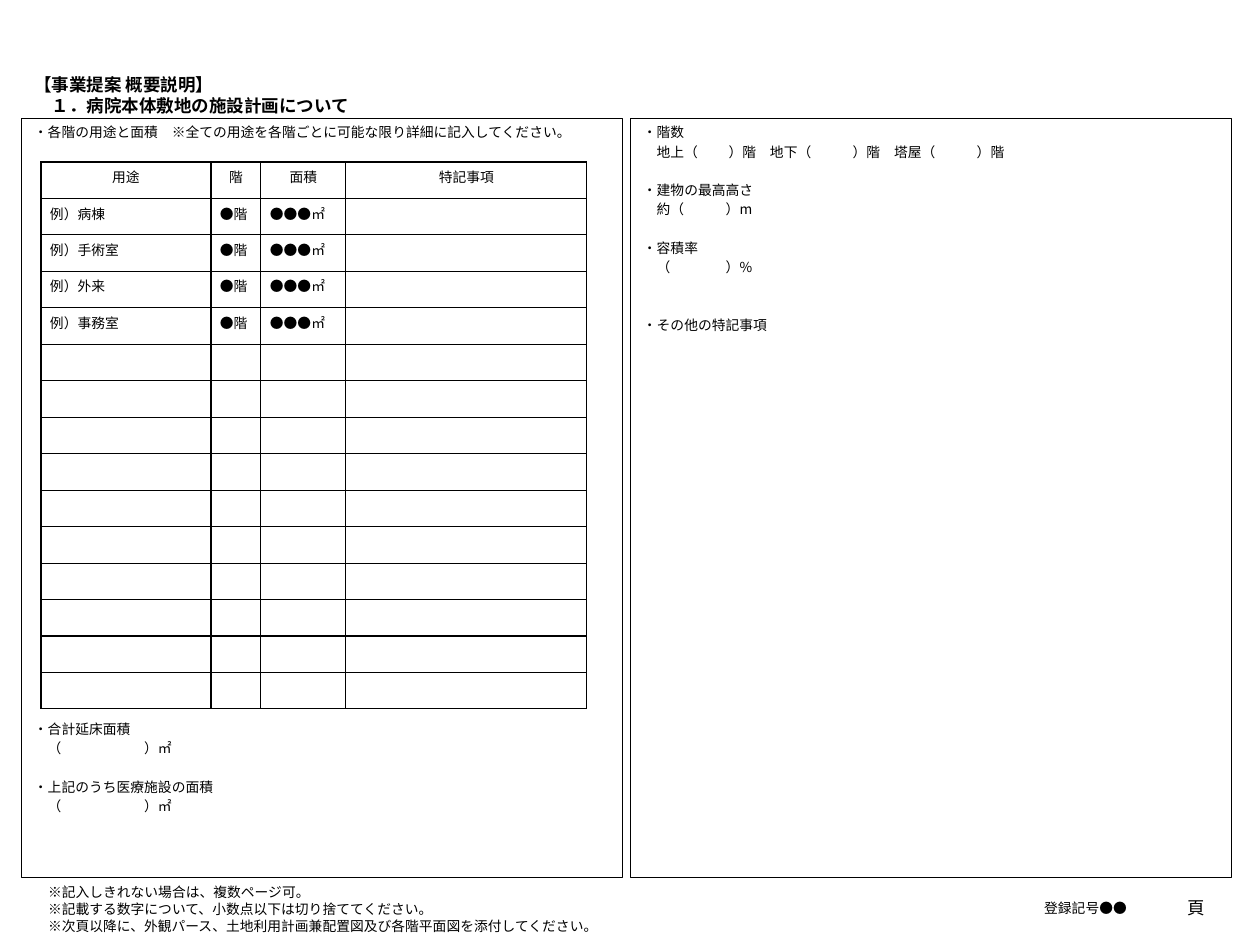
from dataclasses import dataclass

from lxml.etree import SubElement
from pptx import Presentation
from pptx.dml.color import RGBColor
from pptx.enum.shapes import MSO_SHAPE
from pptx.enum.text import MSO_ANCHOR, MSO_AUTO_SIZE, PP_ALIGN
from pptx.oxml.ns import qn
from pptx.util import Emu, Pt

PX = 10160  # EMU per px, 90 px to the inch


@dataclass(frozen=True)
class Theme:
    font: str = "Noto Sans CJK JP"
    ink: RGBColor = RGBColor(0, 0, 0)
    heading: int = 14
    body: int = 11
    leading: float = 1.2  # line height as a multiple of type size
    before: float = 0.2  # panel paragraph gap, same unit
    panel_line: float = 0.75
    grid_line: float = 1


THEME = Theme()

HEADING = [("【事業提案 概要説明】", 0, 0), ("１．病院本体敷地の施設計画について", 0, 1)]

# Panel paragraphs: text, lines left free above, indent in characters
USES = [
    ("・各階の用途と面積　※全ての用途を各階ごとに可能な限り詳細に記入してください。", 0, 0),
    ("・合計延床面積", 30, 0),
    ("（　　　　　　）㎡", 0, 1),
    ("・上記のうち医療施設の面積", 1, 0),
    ("（　　　　　　）㎡", 0, 1),
]
BUILDING = [
    ("・階数", 0, 0),
    ("地上（　 　）階　地下（　　　）階　塔屋（　　　）階", 0, 1),
    ("・建物の最高高さ", 1, 0),
    ("約（　　　）m", 0, 1),
    ("・容積率", 1, 0),
    ("（　　　　）%", 0, 1),
    ("・その他の特記事項", 2, 0),
]
NOTES = [
    ("※記入しきれない場合は、複数ページ可。", 0, 0),
    ("※記載する数字について、小数点以下は切り捨ててください。", 0, 0),
    ("※次頁以降に、外観パース、土地利用計画兼配置図及び各階平面図を添付してください。", 0, 0),
]

TABLE_HEAD = ["用途", "階", "面積", "特記事項"]
EXAMPLES = ["病棟", "手術室", "外来", "事務室"]
COLUMNS = [170, 50, 85, 241]
ROW_COUNT = 15


def px(*lengths):
    return [Emu(length * PX) for length in lengths]


def write(para, text, size=THEME.body, bold=False, align=PP_ALIGN.LEFT):
    """Put one formatted span, or the type size alone, into a paragraph."""
    para.alignment = align
    if not text:
        SubElement(para._p, qn("a:endParaRPr"), sz=str(size * 100))
        return
    span = para.add_run()
    span.text = text
    span.font.size = Pt(size)
    span.font.bold = bold
    span.font.color.rgb = THEME.ink
    span.font.name = THEME.font
    SubElement(span._r.get_or_add_rPr(), qn("a:ea"), typeface=THEME.font)


def fill_frame(box, lines, size=THEME.body, before=0, anchor=MSO_ANCHOR.TOP, **style):
    frame = box.text_frame
    frame.word_wrap = True
    frame.auto_size = MSO_AUTO_SIZE.NONE
    frame.vertical_anchor = anchor
    frame.margin_left = frame.margin_right = Emu(13 * PX)
    frame.margin_top = frame.margin_bottom = Emu(6 * PX)
    for index, (text, free_lines, indent) in enumerate(lines):
        para = frame.add_paragraph() if index else frame.paragraphs[0]
        para.line_spacing = Pt(size * THEME.leading)
        para.space_before = Pt(size * (before + free_lines * (THEME.leading + before)))
        props = para._p.get_or_add_pPr()
        props.set("marL", str(Pt(size * indent)))
        props.set("indent", "0")
        write(para, text, size=size, **style)


def set_title(slide):
    title = slide.shapes.title
    title.left, title.top, title.width, title.height = px(21, 68, 1205, 71)
    fill_frame(title, HEADING, size=THEME.heading, bold=True)


def add_panel(slide, left, lines):
    panel = slide.shapes.add_shape(MSO_SHAPE.RECTANGLE, *px(left, 118, 602, 759))
    panel.shadow.inherit = False
    panel.fill.background()
    panel.line.color.rgb = THEME.ink
    panel.line.width = Pt(THEME.panel_line)
    fill_frame(panel, lines, before=THEME.before)


def add_label(slide, left, top, width, lines, **style):
    box = slide.shapes.add_textbox(*px(left, top, width, 50))
    fill_frame(box, lines, anchor=MSO_ANCHOR.MIDDLE, **style)


def outline(cell):
    props = cell._tc.get_or_add_tcPr()
    for position, side in enumerate(("a:lnL", "a:lnR", "a:lnT", "a:lnB")):
        line = SubElement(props, qn(side), w=str(Pt(THEME.grid_line)))
        props.insert(position, line)
        fill = SubElement(line, qn("a:solidFill"))
        SubElement(fill, qn("a:srgbClr"), val=str(THEME.ink))


def add_use_table(slide):
    frame = slide.shapes.add_table(
        ROW_COUNT, len(COLUMNS), *px(41, 162, sum(COLUMNS), 547))
    table = frame.table
    table.first_row = table.horz_banding = False
    for column, width in zip(table.columns, COLUMNS):
        column.width = Emu(width * PX)
    content = [TABLE_HEAD]
    content += [[f"例）{use}", "●階", "●●●㎡", ""] for use in EXAMPLES]
    content += [[""] * len(COLUMNS)] * (ROW_COUNT - len(content))
    for row_index, texts in enumerate(content):
        align = PP_ALIGN.LEFT if row_index else PP_ALIGN.CENTER
        for column_index, text in enumerate(texts):
            cell = table.cell(row_index, column_index)
            cell.fill.background()
            outline(cell)
            write(cell.text_frame.paragraphs[0], text, align=align)


def main():
    deck = Presentation()
    deck.slide_width, deck.slide_height = px(1260, 945)
    slide = deck.slides.add_slide(deck.slide_layouts[5])

    # Heading and the two panels
    set_title(slide)
    add_panel(slide, 21, USES)
    add_panel(slide, 630, BUILDING)

    # Footer: page mark and registration code
    add_label(slide, 1147, 883, 71, [("頁", 0, 0)],
              size=THEME.heading, align=PP_ALIGN.RIGHT)
    add_label(slide, 1027, 883, 113, [("登録記号●●", 0, 0)], align=PP_ALIGN.RIGHT)

    # Uses by floor, then the notes below the panels
    add_use_table(slide)
    add_label(slide, 35, 884, 624, NOTES)
    deck.save("out.pptx")


if __name__ == "__main__":
    main()
